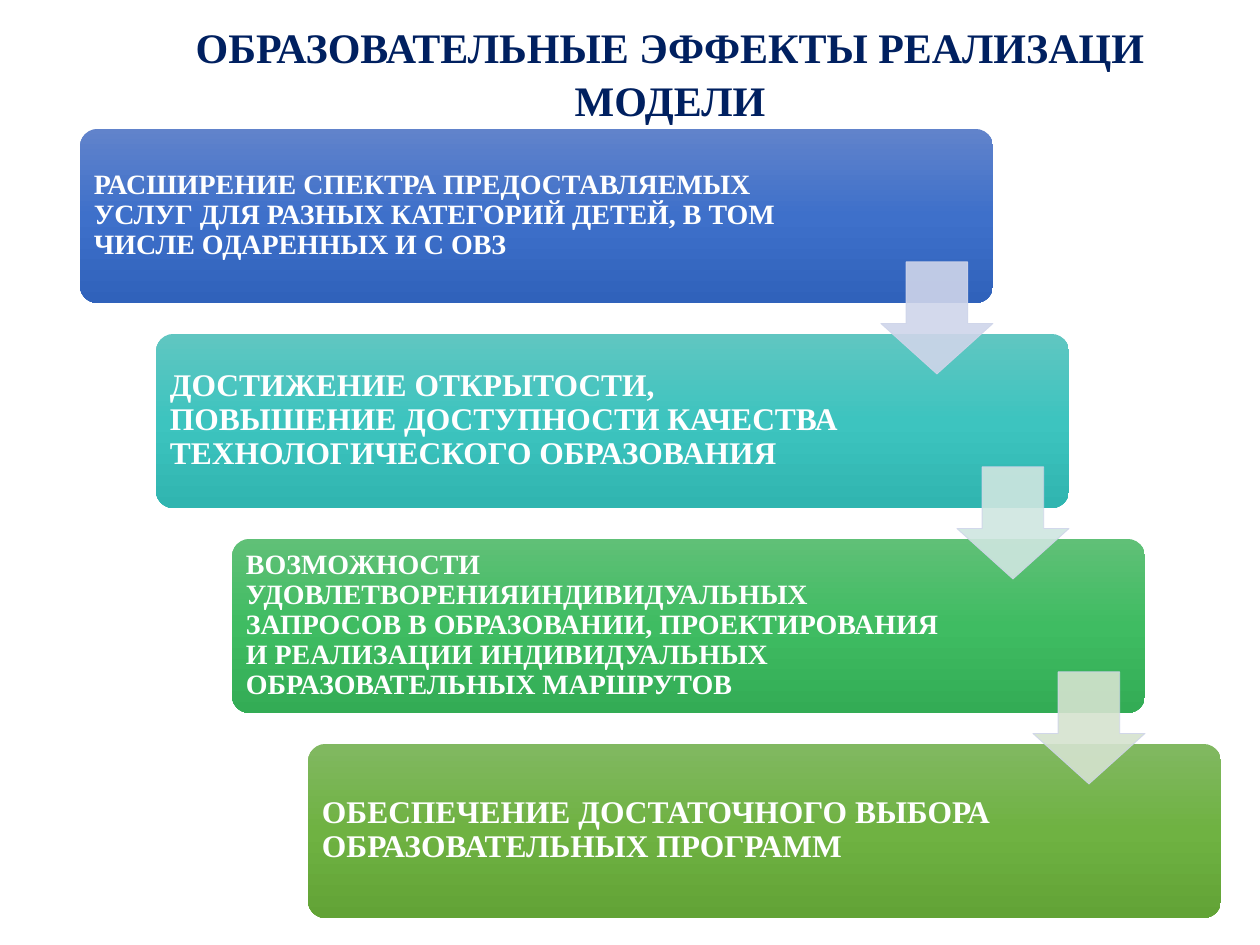
from copy import deepcopy

from lxml.etree import SubElement
from pptx import Presentation
from pptx.dml.color import RGBColor
from pptx.enum.shapes import MSO_SHAPE as Shape
from pptx.enum.text import MSO_ANCHOR as Anchor, MSO_AUTO_SIZE as AutoSize, PP_ALIGN as Align
from pptx.oxml.ns import qn
from pptx.util import Emu, Pt

PX = 914400 // 126
COLORS = {
    "title": "002060",
    "text": "FFFFFF",
    "arrow_line": "CFD5EA",
}
TITLE = "ОБРАЗОВАТЕЛЬНЫЕ ЭФФЕКТЫ РЕАЛИЗАЦИ МОДЕЛИ"
EFFECTS = [
    ("РАСШИРЕНИЕ СПЕКТРА ПРЕДОСТАВЛЯЕМЫХ УСЛУГ ДЛЯ РАЗНЫХ КАТЕГОРИЙ ДЕТЕЙ, "
     "В ТОМ ЧИСЛЕ ОДАРЕННЫХ И С ОВЗ", 16, ("6183CB", "3E70CA", "3062BB")),
    ("ДОСТИЖЕНИЕ ОТКРЫТОСТИ, ПОВЫШЕНИЕ ДОСТУПНОСТИ КАЧЕСТВА "
     "ТЕХНОЛОГИЧЕСКОГО ОБРАЗОВАНИЯ", 18, ("60C6C1", "3DC4BF", "30B5B0")),
    ("ВОЗМОЖНОСТИ УДОВЛЕТВОРЕНИЯИНДИВИДУАЛЬНЫХ ЗАПРОСОВ В ОБРАЗОВАНИИ, "
     "ПРОЕКТИРОВАНИЯ И РЕАЛИЗАЦИИ ИНДИВИДУАЛЬНЫХ ОБРАЗОВАТЕЛЬНЫХ МАРШРУТОВ",
     16, ("60C077", "3FBC62", "33AC55")),
    ("ОБЕСПЕЧЕНИЕ ДОСТАТОЧНОГО ВЫБОРА ОБРАЗОВАТЕЛЬНЫХ ПРОГРАММ",
     18, ("81B861", "6FB242", "62A336")),
]
ARROW_FILLS = ["CFD5EA", "CFE6E0", "D5E3CF"]
STEP_X, STEP_Y = 76, 205


def rgb(color):
    return RGBColor.from_string(color)


class SlideBuilder:
    font_name = "Times New Roman"

    def __init__(self, slide):
        self.slide = slide

    def box(self, *lengths):
        return [Emu(length * PX) for length in lengths]

    def set_text(self, frame, text, size, color, spacing):
        frame.word_wrap = True
        frame.text = text
        paragraph = frame.paragraphs[0]
        paragraph.line_spacing = spacing
        font = paragraph.font
        font.name, font.size, font.bold = self.font_name, Pt(size), True
        font.color.rgb = rgb(color)
        return paragraph

    def title(self, text, left, top, width, height):
        shape = self.slide.shapes.title
        shape.left, shape.top, shape.width, shape.height = self.box(left, top, width, height)
        frame = shape.text_frame
        frame.auto_size = AutoSize.NONE
        frame.vertical_anchor = Anchor.TOP
        self.set_text(frame, text, 24, COLORS["title"], 1.05).alignment = Align.CENTER

    def preset(self, kind, box, adjustments):
        shape = self.slide.shapes.add_shape(kind, *self.box(*box))
        shape.shadow.inherit = False
        for index, value in enumerate(adjustments):
            shape.adjustments[index] = value
        return shape

    def card(self, left, top, width, height, gradient):
        shape = self.preset(Shape.ROUNDED_RECTANGLE, (left, top, width, height), [0.1])
        shape.line.fill.background()
        fill = shape.fill
        fill.gradient()
        fill.gradient_angle = 270
        stop_list = shape.element.spPr.find(qn("a:gradFill")).find(qn("a:gsLst"))
        stop_list.insert(1, deepcopy(stop_list[0]))
        for stop, position, color in zip(fill.gradient_stops, (0, 0.5, 1), gradient):
            stop.position = position
            stop.color.rgb = rgb(color)

    def label(self, text, size, left, top, width, height):
        frame = self.slide.shapes.add_textbox(*self.box(left, top, width, height)).text_frame
        frame.vertical_anchor = Anchor.MIDDLE
        inset = Emu(9 * PX)
        frame.margin_left = frame.margin_right = inset
        frame.margin_top = frame.margin_bottom = inset
        self.set_text(frame, text, size, COLORS["text"], 0.9)

    def arrow(self, left, top, size, color):
        shape = self.preset(Shape.DOWN_ARROW, (left, top, size, size), [0.55, 0.45])
        shape.fill.solid()
        shape.fill.fore_color.rgb = rgb(color)
        shape.line.color.rgb = rgb(COLORS["arrow_line"])
        shape.line.width = Pt(0.5)
        for element in shape.element.spPr.iter(qn("a:srgbClr")):
            SubElement(element, qn("a:alpha"), val="90000")


def main():
    presentation = Presentation()
    presentation.slide_width, presentation.slide_height = Emu(1260 * PX), Emu(945 * PX)
    builder = SlideBuilder(presentation.slides.add_slide(presentation.slide_layouts[5]))
    builder.title(TITLE, 118, 13, 1104, 173)
    for index, (text, size, gradient) in enumerate(EFFECTS):
        left, top = 80 + index * STEP_X, 129 + index * STEP_Y
        builder.card(left, top, 913, 174, gradient)
        builder.label(text, size, left + 5, top + 5, 714, 163)
    for index, color in enumerate(ARROW_FILLS):
        builder.arrow(881 + index * STEP_X, 262 + index * STEP_Y, 112, color)
    presentation.save("out.pptx")


if __name__ == "__main__":
    main()
